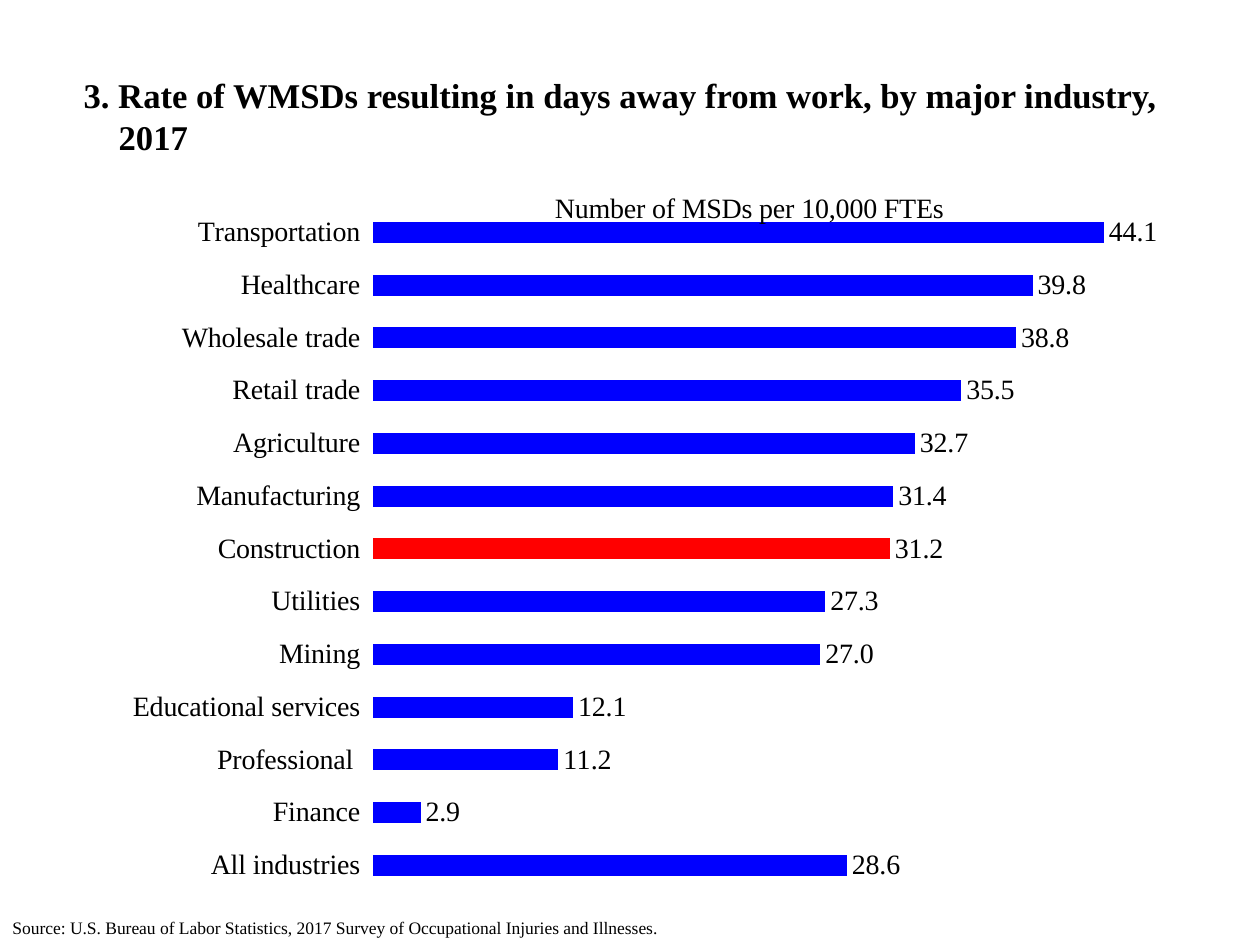
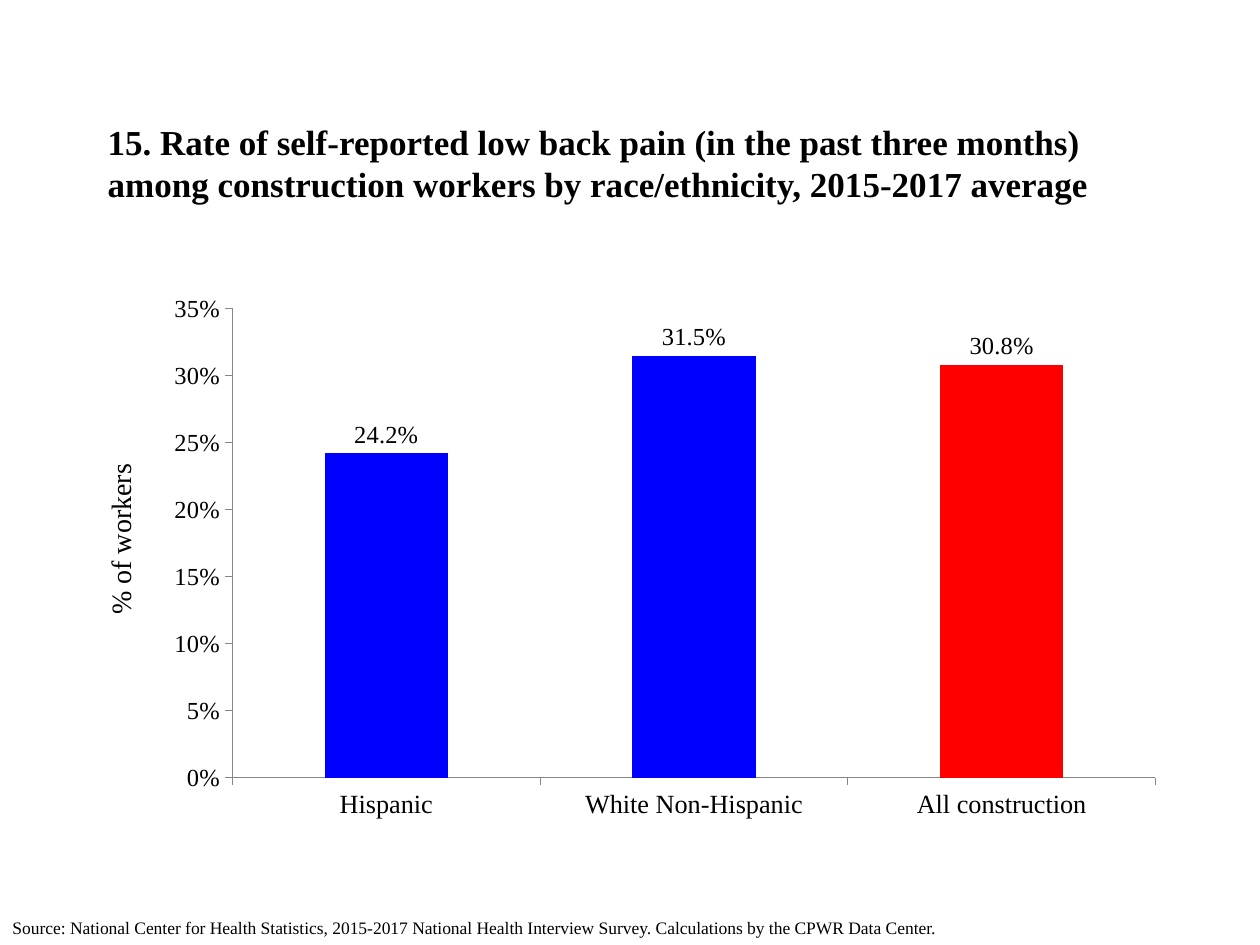
from dataclasses import dataclass
from lxml.etree import SubElement
from pptx import Presentation
from pptx.chart.data import CategoryChartData as Data
from pptx.dml.color import RGBColor as RGB
from pptx.enum.chart import XL_CHART_TYPE as Kind, XL_LABEL_POSITION as Spot, XL_TICK_MARK as Tick
from pptx.enum.text import MSO_ANCHOR as Anchor, MSO_AUTO_SIZE as Fit, PP_ALIGN as Align
from pptx.oxml.ns import qn
from pptx.util import Emu, Pt


@dataclass
class Theme:
    face: str = "Times New Roman"
    ink: RGB = RGB(0, 0, 0)
    bar: RGB = RGB(0, 0, 255)
    hot: RGB = RGB(255, 0, 0)
    rule: RGB = RGB(0x86, 0x86, 0x86)
    head: int = 20
    body: int = 16
    cat: int = 15
    small: int = 14
    note: int = 10


look = Theme()
SCALE = 914400 / 126


def px(*nums):
    return [Emu(round(n * SCALE)) for n in nums]


def style(font, size, bold=False):
    font.name, font.size, font.bold = look.face, Pt(size), bold
    font.color.rgb = look.ink


deck = Presentation()
deck.slide_width, deck.slide_height = px(1260, 945)

pages = [
    dict(
        title="3. Rate of WMSDs resulting in days away from work, by major industry, \v2017",
        spot=(71, 64, 1119, 103), head=19.8, hang=35,
        source="Source: U.S. Bureau of Labor Statistics, 2017 Survey of Occupational Injuries and Illnesses.",
        kind=Kind.BAR_CLUSTERED, area=(58, 156, 1144, 736), hot=6,
        form="0.0", size=look.body, cat=look.body, top=50, step=10,
        rows=[("Transportation", 44.1), ("Healthcare", 39.8), ("Wholesale trade", 38.8),
              ("Retail trade", 35.5), ("Agriculture", 32.7), ("Manufacturing", 31.4),
              ("Construction", 31.2), ("Utilities", 27.3), ("Mining", 27.0),
              ("Educational services", 12.1), ("Professional ", 11.2), ("Finance", 2.9),
              ("All industries", 28.6)]),
    dict(
        title="15. Rate of self-reported low back pain (in the past three months) among "
              "construction workers by race/ethnicity, 2015-2017 average",
        spot=(95, 84, 1071, 158), head=look.head, hang=0,
        source="Source: National Center for Health Statistics, 2015-2017 National Health "
               "Interview Survey. Calculations by the CPWR Data Center.",
        kind=Kind.COLUMN_CLUSTERED, area=(154, 284, 1022, 546), hot=2,
        form="0.0%", size=look.small, cat=look.cat, top=0.35, step=0.05,
        rows=[("Hispanic", 0.242), ("White Non-Hispanic", 0.315), ("All construction", 0.308)]),
]

slides, charts = [], []
for page in pages:
    slide = deck.slides.add_slide(deck.slide_layouts[5])
    title = slide.shapes.title
    title.left, title.top, title.width, title.height = px(*page["spot"])
    frame = title.text_frame
    frame.text = page["title"]
    frame.auto_size, frame.vertical_anchor = Fit.NONE, Anchor.MIDDLE
    para = frame.paragraphs[0]
    para.alignment = Align.LEFT
    style(para.font, page["head"], True)
    hang = px(page["hang"])[0]
    props = para._p.get_or_add_pPr()
    props.set("marL", str(hang))
    props.set("indent", str(-hang))

    data = Data(number_format=page["form"])
    data.categories = [name for name, rate in page["rows"]]
    data.add_series("Series 1", [rate for name, rate in page["rows"]])
    chart = slide.shapes.add_chart(page["kind"], *px(*page["area"]), data).chart
    style(chart.font, page["size"])
    chart.has_legend = chart.has_title = False
    plot = chart.plots[0]
    plot.gap_width, plot.vary_by_categories = 150, False
    bars = plot.series[0]
    bars.invert_if_negative = False
    for part, tone in ((bars, look.bar), (bars.points[page["hot"]], look.hot)):
        part.format.fill.solid()
        part.format.fill.fore_color.rgb = tone
    plot.has_data_labels = True
    tags = plot.data_labels
    tags.show_value, tags.position = True, Spot.OUTSIDE_END
    tags.number_format, tags.number_format_is_linked = page["form"], False
    style(tags.font, page["size"])
    for axis, size in ((chart.category_axis, page["cat"]), (chart.value_axis, page["size"])):
        axis.has_major_gridlines = False
        axis.major_tick_mark = Tick.OUTSIDE
        axis.format.line.color.rgb = look.rule
        style(axis.tick_labels.font, size)
    axis.minimum_scale, axis.maximum_scale, axis.major_unit = 0, page["top"], page["step"]

    note = slide.shapes.add_textbox(*px(0, 911, 1228, 34)).text_frame
    note.word_wrap = True
    note.text = page["source"]
    style(note.paragraphs[0].font, look.note)
    slides.append(slide)
    charts.append(chart)

rates, pain = charts
rates.category_axis.reverse_order = True
rates.category_axis.format.line.fill.background()
rates.value_axis.visible = False
label = rates.chart_title
label.text_frame.text = "Number of MSDs per 10,000 FTEs"
style(label.text_frame.paragraphs[0].font, look.body)
area = rates._chartSpace.find(".//" + qn("c:plotArea"))
for part, slot, rule in (
    (label._element, 1, dict(xMode="edge", yMode="edge", x=0.43, y=0.04)),
    (area, 0, dict(layoutTarget="inner", xMode="edge", yMode="edge",
                   x=0.275, y=0.068, w=0.725, h=0.932)),
):
    for old in part.findall(qn("c:layout")):
        part.remove(old)
    box = SubElement(part, qn("c:layout"))
    part.insert(slot, box)
    manual = SubElement(box, qn("c:manualLayout"))
    for key, val in rule.items():
        SubElement(manual, qn("c:" + key)).set("val", str(val))

ticks = pain.value_axis.tick_labels
ticks.number_format, ticks.number_format_is_linked = "0%", False
side = slides[1].shapes.add_textbox(*px(97, 462, 59, 165)).text_frame
side.word_wrap = False
side._txBody.bodyPr.set("vert", "vert270")
side.text = "% of workers"
style(side.paragraphs[0].font, look.body)

deck.save("out.pptx")
